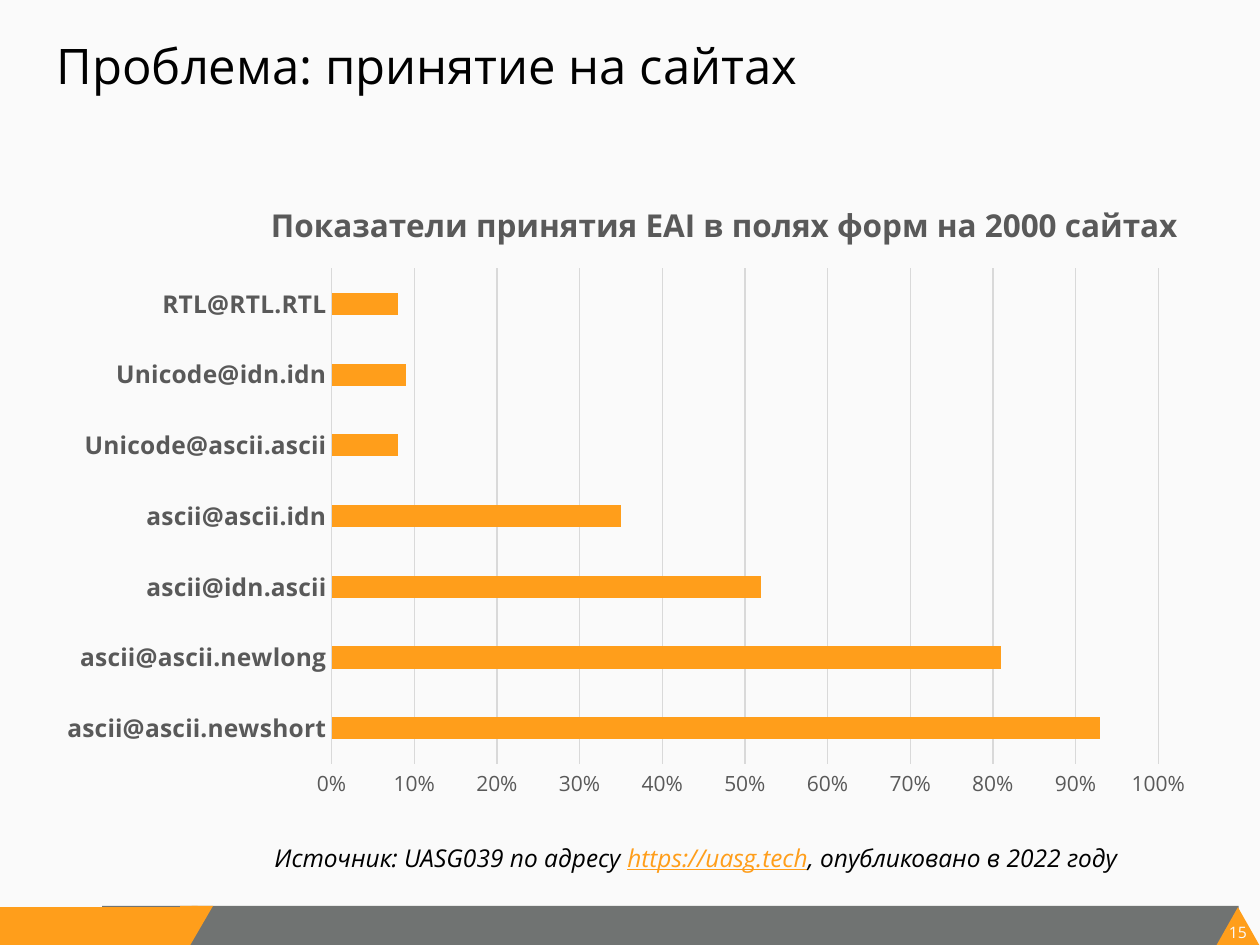
import pptx
import pptx.chart.data
import pptx.dml.color
import pptx.enum.chart
import pptx.enum.shapes
import pptx.enum.text
import pptx.oxml
import pptx.oxml.ns
import pptx.util
from pptx.util import Inches

RGBColor = pptx.dml.color.RGBColor
ShapeType = pptx.enum.shapes.MSO_SHAPE
Align = pptx.enum.text.PP_ALIGN

FONT = "Open Sans"
BLACK = RGBColor(0x00, 0x00, 0x00)
PAPER = RGBColor(0xFA, 0xFA, 0xFA)
ORANGE = RGBColor(0xFF, 0x9E, 0x1B)
BAR_GRAY = RGBColor(0x70, 0x73, 0x72)
TEXT_GRAY = RGBColor(0x59, 0x59, 0x59)
GRID_GRAY = RGBColor(0xD9, 0xD9, 0xD9)

ACCEPTANCE = {
    "ascii@ascii.newshort": 0.93,
    "ascii@ascii.newlong": 0.81,
    "ascii@idn.ascii": 0.52,
    "ascii@ascii.idn": 0.35,
    "Unicode@ascii.ascii": 0.08,
    "Unicode@idn.idn": 0.09,
    "RTL@RTL.RTL": 0.08,
}


def format_font(font, size, color=BLACK, bold=False, italic=False, underline=False):
    font.name = FONT
    font.size = pptx.util.Pt(size)
    font.color.rgb = color
    font.bold = bold
    font.italic = italic
    font.underline = underline


def add_run(paragraph, text, **text_format):
    run = paragraph.add_run()
    run.text = text
    format_font(run.font, **text_format)


def add_text_box(slide, box, margins=(0.1, 0.05), align=Align.LEFT):
    frame = slide.shapes.add_textbox(*map(Inches, box)).text_frame
    frame.word_wrap = True
    frame.margin_left = frame.margin_right = Inches(margins[0])
    frame.margin_top = frame.margin_bottom = Inches(margins[1])
    frame.paragraphs[0].alignment = align
    return frame.paragraphs[0]


def add_filled_shape(slide, shape_type, box, color):
    shape = slide.shapes.add_shape(shape_type, *map(Inches, box))
    shape.shadow.inherit = False
    shape.fill.solid()
    shape.fill.fore_color.rgb = color
    shape.line.fill.background()
    return shape


def add_footer(slide, box, page):
    left, top, width, height = box
    right = left + width
    add_filled_shape(slide, ShapeType.RECTANGLE,
                     (left + 0.81, top, 9.02, height), BAR_GRAY)
    add_filled_shape(slide, ShapeType.RECTANGLE, (left, top + 0.01, 1.5, height), ORANGE)
    add_filled_shape(slide, ShapeType.ISOSCELES_TRIANGLE,
                     (right - 0.35, top + 0.01, 0.35, height), ORANGE)
    number = add_text_box(slide, (right - 0.26, top + 0.13, 0.17, 0.15), (0, 0), Align.CENTER)
    add_run(number, page, size=9, color=PAPER)
    slant = add_filled_shape(slide, ShapeType.PARALLELOGRAM,
                             (left + 1.34, top, 0.35, height), ORANGE)
    slant.adjustments[0] = 0.581
    slant.rotation = 180
    add_filled_shape(slide, ShapeType.RECTANGLE, (left + 1.43, top, 0.14, 0.13), ORANGE)


def add_title(slide, box, text):
    title = slide.shapes.title
    title.left, title.top, title.width, title.height = map(Inches, box)
    frame = title.text_frame
    frame.auto_size = pptx.enum.text.MSO_AUTO_SIZE.NONE
    frame.vertical_anchor = pptx.enum.text.MSO_ANCHOR.TOP
    frame.paragraphs[0].alignment = Align.LEFT
    add_run(frame.paragraphs[0], text, size=28)


def make_layout(**fractions):
    names = {"x": "xMode", "y": "yMode"}
    target = '<c:layoutTarget val="inner"/>' if "w" in fractions else ""
    modes = "".join(f'<c:{mode} val="edge"/>' for mode in names.values())
    values = "".join(f'<c:{name} val="{value}"/>' for name, value in fractions.items())
    return pptx.oxml.parse_xml(
        f'<c:layout {pptx.oxml.ns.nsdecls("c")}><c:manualLayout>'
        f"{target}{modes}{values}</c:manualLayout></c:layout>")


def place_chart_part(element, **fractions):
    layout = element.find(pptx.oxml.ns.qn("c:layout"))
    if layout is not None:
        element.remove(layout)
    text = element.find(pptx.oxml.ns.qn("c:tx"))
    position = 0 if text is None else element.index(text) + 1
    element.insert(position, make_layout(**fractions))


def format_line(line, color):
    line.color.rgb = color
    line.width = pptx.util.Pt(0.75)


def add_acceptance_chart(slide, box, title):
    data = pptx.chart.data.CategoryChartData(number_format="0%")
    data.categories = list(ACCEPTANCE)
    data.add_series("Series 1", list(ACCEPTANCE.values()))
    chart = slide.shapes.add_chart(pptx.enum.chart.XL_CHART_TYPE.BAR_CLUSTERED,
                                   *map(Inches, box), data).chart
    format_font(chart.font, size=10)
    chart.has_legend = False
    chart.has_title = True
    add_run(chart.chart_title.text_frame.paragraphs[0], title,
            size=18, color=TEXT_GRAY, bold=True)
    chart.chart_title.include_in_layout = False

    plot = chart.plots[0]
    plot.gap_width = 219
    plot.vary_by_categories = False
    fill = plot.series[0].format.fill
    fill.solid()
    fill.fore_color.rgb = ORANGE

    no_tick = pptx.enum.chart.XL_TICK_MARK.NONE
    for axis in (chart.category_axis, chart.value_axis):
        axis.major_tick_mark = axis.minor_tick_mark = no_tick
    format_font(chart.category_axis.tick_labels.font, size=14, color=TEXT_GRAY, bold=True)
    format_line(chart.category_axis.format.line, GRID_GRAY)

    values = chart.value_axis
    values.minimum_scale, values.maximum_scale, values.major_unit = 0, 1, 0.1
    values.tick_labels.number_format = "0%"
    values.tick_labels.number_format_is_linked = False
    format_font(values.tick_labels.font, size=12, color=TEXT_GRAY)
    values.format.line.fill.background()
    values.has_major_gridlines = True
    format_line(values.major_gridlines.format.line, GRID_GRAY)

    chart_element = chart.element.find(pptx.oxml.ns.qn("c:chart"))
    place_chart_part(chart_element.find(pptx.oxml.ns.qn("c:title")), x=0.19, y=0.03)
    place_chart_part(chart_element.find(pptx.oxml.ns.qn("c:plotArea")),
                     x=0.247, y=0.147, w=0.71, h=0.78)


def add_citation(slide, box):
    paragraph = add_text_box(slide, box)
    add_run(paragraph, "Источник: UASG039 по адресу ", size=14, italic=True)
    add_run(paragraph, "https://uasg.tech", size=14, color=ORANGE, italic=True, underline=True)
    add_run(paragraph, ", опубликовано в 2022 году", size=14, italic=True)


def main():
    presentation = pptx.Presentation()
    presentation.slide_width = Inches(10)
    presentation.slide_height = Inches(7.5)
    slide = presentation.slides.add_slide(presentation.slide_layouts[5])
    slide.background.fill.solid()
    slide.background.fill.fore_color.rgb = PAPER
    add_footer(slide, (0, 7.19, 10, 0.31), "15")
    add_title(slide, (0.35, 0.23, 9.24, 1.25), "Проблема: принятие на сайтах")
    add_acceptance_chart(slide, (0.35, 1.39, 9.24, 5.04),
                         "Показатели принятия EAI в полях форм на 2000 сайтах")
    add_citation(slide, (2.08, 6.64, 7.71, 0.34))
    presentation.save("out.pptx")


if __name__ == "__main__":
    main()
